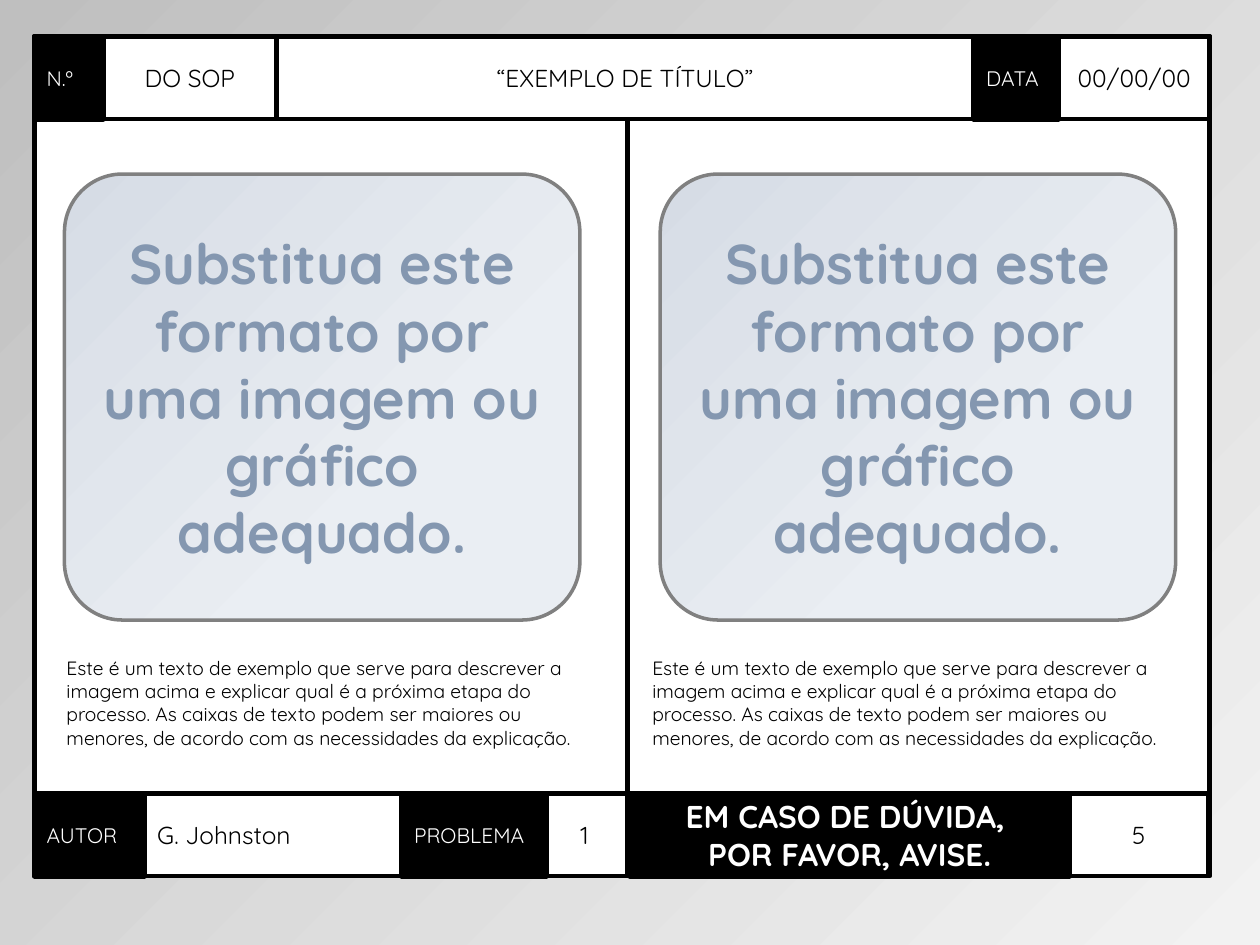
from dataclasses import dataclass
from itertools import pairwise

from lxml import etree
from pptx import Presentation
from pptx import util as u
from pptx.dml.color import RGBColor
from pptx.enum import shapes, text
from pptx.oxml.ns import qn


@dataclass(frozen=True)
class Theme:
    font: str = "Quicksand"
    ink: str = "000000"
    paper: str = "FFFFFF"
    panel_line: str = "808080"
    panel_text: str = "8497B0"
    backdrop: tuple = ((0, "F2F2F2"), (1, "BFBFBF"))
    panel_fill: tuple = ((0.32, "EAEEF3"), (1, "D6DCE5"))
    label: int = 12
    value: int = 14
    caption: int = 11
    notice: int = 18
    panel: int = 32
    thin: float = 2.75
    thick: float = 3
    outline: float = 2


LEFT, CENTER = text.PP_ALIGN.LEFT, text.PP_ALIGN.CENTER


class Sheet:
    def __init__(self, s, theme):
        self.s, self.t = s, theme

    def gradient(self, fill, stops):
        fill.gradient()
        fill.gradient_angle = 135
        for stop, (position, color) in zip(fill.gradient_stops, stops):
            stop.position = position
            stop.color.rgb = RGBColor.from_string(color)

    def line(self, line, color, width):
        line.color.rgb = RGBColor.from_string(color)
        line.width = u.Pt(width)

    def set_text(self, sp, words, size, color, align=LEFT, bold=False):
        tf = sp.text_frame
        tf.word_wrap = True
        tf.text = words
        p = tf.paragraphs[0]
        p.alignment = align
        for r in p.runs:
            r.font.name = self.t.font
            r.font.size = u.Pt(size)
            r.font.bold = bold
            r.font.color.rgb = RGBColor.from_string(color)
        return tf

    def shape(self, kind, x, y, w, h):
        sp = self.s.shapes.add_shape(kind, u.Cm(x), u.Cm(y), u.Cm(w), u.Cm(h))
        sp.shadow.inherit = False
        return sp

    def box(self, x, y, w, h, fill=None, width=None):
        sp = self.shape(shapes.MSO_SHAPE.RECTANGLE, x, y, w, h)
        if fill:
            sp.fill.solid()
            sp.fill.fore_color.rgb = RGBColor.from_string(fill)
        else:
            sp.fill.background()
        self.line(sp.line, self.t.ink, width or self.t.thin)
        return sp

    def label(self, x, y, w, h, words, size=None, align=LEFT, bold=False):
        sp = self.box(x, y, w, h, self.t.ink, self.t.thick)
        tf = self.set_text(sp, words, size or self.t.label, self.t.paper, align, bold)
        tf.vertical_anchor = text.MSO_ANCHOR.MIDDLE

    def value(self, x, y, w, h, words, align=CENTER):
        sp = self.box(x, y, w, h, self.t.paper)
        tf = self.set_text(sp, words, self.t.value, self.t.ink, align)
        tf.vertical_anchor = text.MSO_ANCHOR.MIDDLE

    def panel(self, x, y, w, h, words):
        sp = self.shape(shapes.MSO_SHAPE.ROUNDED_RECTANGLE, x, y, w, h)
        sp.adjustments[0] = 0.13
        self.gradient(sp.fill, self.t.panel_fill)
        self.line(sp.line, self.t.panel_line, self.t.outline)
        tf = self.set_text(sp, words, self.t.panel, self.t.panel_text, CENTER, True)
        tf.vertical_anchor = text.MSO_ANCHOR.MIDDLE

    def caption(self, x, y, w, h, words):
        sp = self.s.shapes.add_textbox(u.Cm(x), u.Cm(y), u.Cm(w), u.Cm(h))
        tf = self.set_text(sp, words, self.t.caption, self.t.ink)
        tf.auto_size = text.MSO_AUTO_SIZE.SHAPE_TO_FIT_TEXT

    def divider(self, x, top, bottom):
        c = self.s.shapes.add_connector(
            shapes.MSO_CONNECTOR.STRAIGHT, u.Cm(x), u.Cm(top), u.Cm(x), u.Cm(bottom))
        self.line(c.line, self.t.ink, self.t.thick)
        etree.SubElement(c._element.spPr, qn("a:effectLst"))


PANEL_TEXT = "Substitua este formato por uma imagem ou gráfico adequado."
CAPTION_TEXT = (
    "Este é um texto de exemplo que serve para descrever a imagem acima e "
    "explicar qual é a próxima etapa do processo. As caixas de texto podem ser "
    "maiores ou menores, de acordo com as necessidades da explicação."
)


def main():
    prs = Presentation()
    prs.slide_width, prs.slide_height = u.Cm(25.4), u.Cm(19.05)
    s = prs.slides.add_slide(prs.slide_layouts[6])
    theme = Theme()
    sheet = Sheet(s, theme)
    sheet.gradient(s.background.fill, theme.backdrop)

    left, top, width, height, row = 0.69, 0.74, 23.7, 16.92, 1.66
    foot = top + height - row
    sheet.box(left, top, width, height, theme.paper)
    sheet.box(left, top, width, row)

    edges = [left, 2.08, 5.58, 19.63, 21.34, left + width]
    header = [
        (sheet.label, "N.º"),
        (sheet.value, "DO SOP"),
        (sheet.value, "“EXEMPLO DE TÍTULO”"),
        (sheet.label, "DATA"),
        (sheet.value, "00/00/00"),
    ]
    for (x, end), (draw, words) in zip(pairwise(edges), header):
        draw(x, top, end - x, row, words)

    for caption_x, panel_x in ((1.09, 1.3), (12.9, 13.31)):
        sheet.caption(caption_x, 13.11, 11.2, 2.62, CAPTION_TEXT)
        sheet.panel(panel_x, 3.51, 10.39, 8.99, PANEL_TEXT)
    sheet.divider(12.65, top + row, foot)

    sheet.label(left, foot, 2.23, row, "AUTOR")
    sheet.value(2.92, foot, 6.5, row, "G. Johnston", LEFT)
    sheet.label(12.7, foot, 8.86, row, "EM CASO DE DÚVIDA, \vPOR FAVOR, AVISE.",
                theme.notice, CENTER, True)
    sheet.value(21.56, foot, 2.8, row, "5")
    sheet.value(10.92, foot, 1.73, row, "1")
    sheet.label(8.1, foot, 2.92, row, "PROBLEMA")

    prs.save("out.pptx")


if __name__ == "__main__":
    main()
